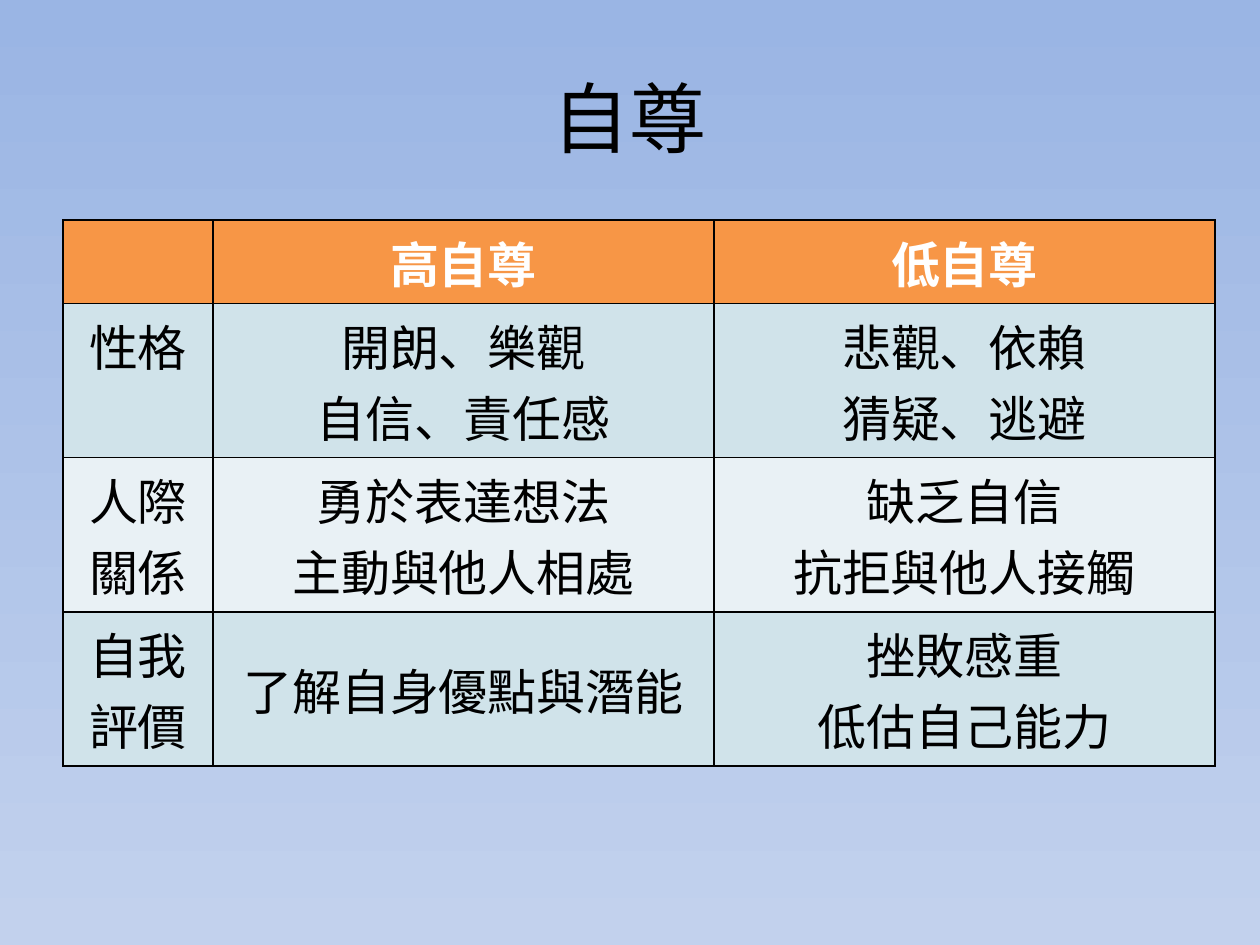
import pptx
import pptx.dml.color
import pptx.enum.text
import pptx.oxml
import pptx.oxml.ns
import pptx.util

RGBColor = pptx.dml.color.RGBColor
BLACK = RGBColor(0x00, 0x00, 0x00)
WHITE = RGBColor(0xFF, 0xFF, 0xFF)
SKY_TOP = RGBColor(0x9A, 0xB5, 0xE4)
SKY_BOTTOM = RGBColor(0xC2, 0xD1, 0xED)
ORANGE = RGBColor(0xF7, 0x96, 0x46)
BAND_DARK = RGBColor(0xD0, 0xE3, 0xEA)
BAND_LIGHT = RGBColor(0xE9, 0xF1, 0xF5)

FONT = "Noto Sans CJK SC"
PX_PER_INCH = 126
TITLE_BOX = (63, 38, 1134, 158)
TABLE_BOX = (63, 220, 1152, 545)
LABEL_WIDTH = 150
HEADER_HEIGHT = 83

ROWS = [
    ["", "高自尊", "低自尊"],
    ["性格", "開朗、樂觀\n自信、責任感", "悲觀、依賴\n猜疑、逃避"],
    ["人際\n關係", "勇於表達想法\n主動與他人相處", "缺乏自信\n抗拒與他人接觸"],
    ["自我\n評價", "了解自身優點與潛能", "挫敗感重\n低估自己能力"],
]


def px(n):
    """Turn pixels into EMU."""
    return pptx.util.Emu(round(n * 914400 / PX_PER_INCH))


def add_text(tf, text, size, color, bold=False):
    """Fill a text frame with one centred paragraph per line."""
    for i, line in enumerate(text.split("\n")):
        p = tf.paragraphs[0] if i == 0 else tf.add_paragraph()
        p.alignment = pptx.enum.text.PP_ALIGN.CENTER
        r = p.add_run()
        r.text = line
        r.font.size = pptx.util.Pt(size)
        r.font.bold = bold
        r.font.color.rgb = color
        r.font.name = FONT
        ea = pptx.oxml.parse_xml(
            f'<a:ea {pptx.oxml.ns.nsdecls("a")} typeface="{FONT}"/>')
        r.font._element.append(ea)


def style_cell(cell, fill):
    """Give a cell thin black borders and a solid fill."""
    tcPr = cell._tc.get_or_add_tcPr()
    for side in "LRTB":
        tcPr.append(pptx.oxml.parse_xml(
            f'<a:ln{side} {pptx.oxml.ns.nsdecls("a")} w="12700"><a:solidFill>'
            f'<a:srgbClr val="{BLACK}"/></a:solidFill></a:ln{side}>'))
    cell.fill.solid()
    cell.fill.fore_color.rgb = fill


def paint_background(s):
    """Paint the slide with a top-to-bottom gradient."""
    fill = s.background.fill
    fill.gradient()
    fill.gradient_angle = 270
    for stop, color in zip(fill.gradient_stops, (SKY_TOP, SKY_BOTTOM)):
        stop.color.rgb = color


def place_title(s, box):
    """Place the slide title in the box."""
    sp = s.shapes.title
    sp.left, sp.top, sp.width, sp.height = map(px, box)
    sp.text_frame.vertical_anchor = pptx.enum.text.MSO_ANCHOR.MIDDLE
    add_text(sp.text_frame, "自尊", 44, BLACK)


def place_table(s, box):
    """Place the comparison table in the box."""
    width, height = box[2:]
    table = s.shapes.add_table(len(ROWS), len(ROWS[0]), *map(px, box)).table
    for i, col in enumerate(table.columns):
        col.width = px((width - LABEL_WIDTH) / 2 if i else LABEL_WIDTH)
    for i, row in enumerate(table.rows):
        row.height = px((height - HEADER_HEIGHT) / 3 if i else HEADER_HEIGHT)
        band = BAND_DARK if i % 2 else BAND_LIGHT
        for cell, text in zip(row.cells, ROWS[i]):
            style_cell(cell, band if i else ORANGE)
            if text:
                add_text(cell.text_frame, text, 28, BLACK if i else WHITE, i == 0)
    table.cell(3, 1).vertical_anchor = pptx.enum.text.MSO_ANCHOR.MIDDLE


def main():
    """Build and save the slide."""
    prs = pptx.Presentation()
    prs.slide_width, prs.slide_height = px(1260), px(945)
    s = prs.slides.add_slide(prs.slide_layouts[5])
    paint_background(s)
    place_title(s, TITLE_BOX)
    place_table(s, TABLE_BOX)
    prs.save("out.pptx")


if __name__ == "__main__":
    main()
